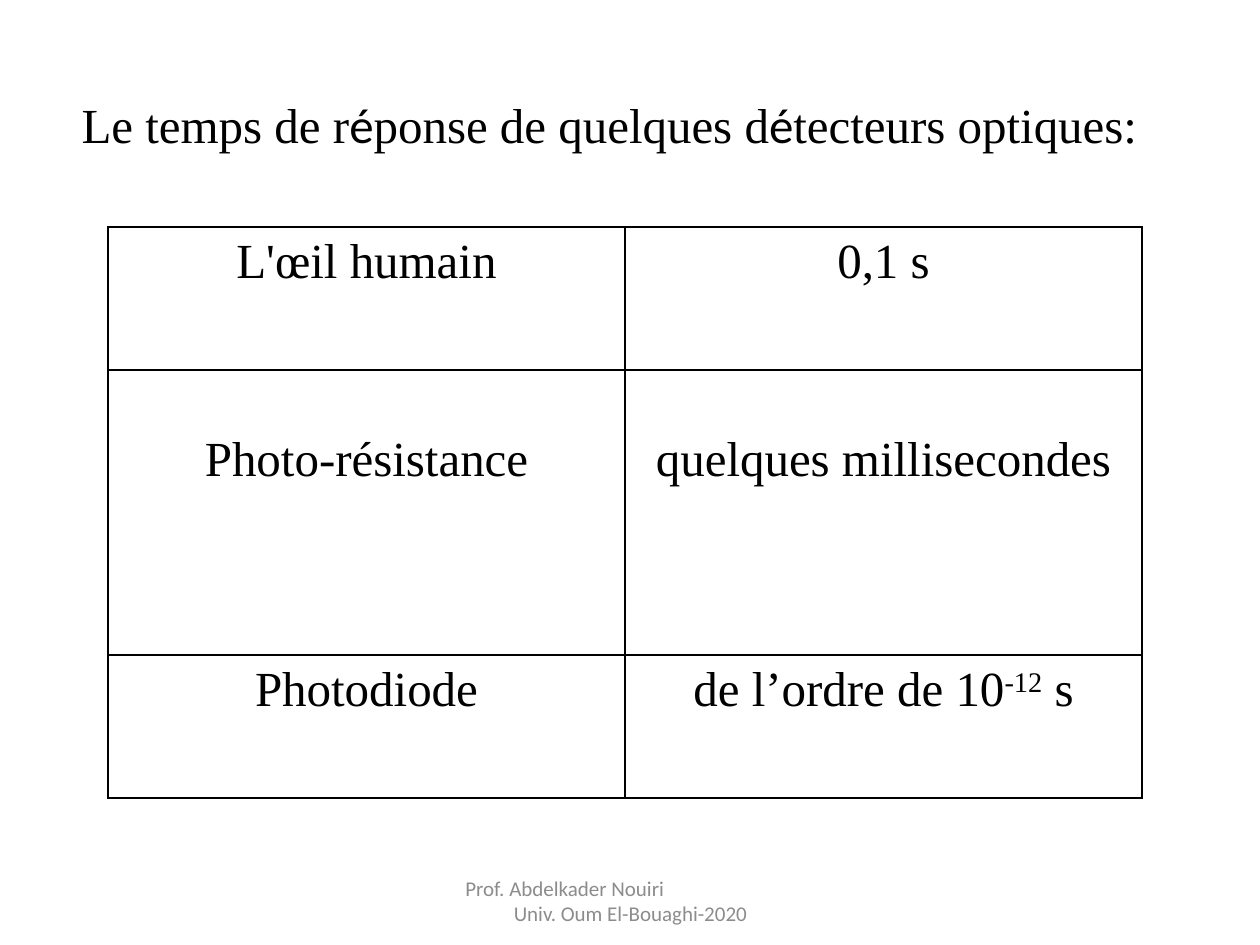
from lxml import etree
from pptx import Presentation
from pptx.dml.color import RGBColor
from pptx.enum.text import MSO_ANCHOR, PP_ALIGN
from pptx.oxml.ns import qn
from pptx.util import Pt

LEFT, CENTER = PP_ALIGN.LEFT, PP_ALIGN.CENTER
TOP, MIDDLE = MSO_ANCHOR.TOP, MSO_ANCHOR.MIDDLE
TITLE_ONLY = 5


def px(length):
    return round(length * 914400 / 126)


def color(value):
    return RGBColor.from_string(value)


class SlideBuilder:
    serif = "Times New Roman"
    sans = "Calibri"
    ink = "000000"
    muted = "8C8C8C"
    text_size = 28
    footer_size = 12

    def __init__(self, presentation):
        self.slide = presentation.slides.add_slide(presentation.slide_layouts[TITLE_ONLY])

    def style(self, paragraph, name, size, ink, alignment):
        paragraph.alignment = alignment
        paragraph.font.name = name
        paragraph.font.size = Pt(size)
        paragraph.font.color.rgb = color(ink)

    def title(self, text, left, top, width, height):
        shape = self.slide.shapes.title
        shape.left, shape.top, shape.width, shape.height = map(px, (left, top, width, height))
        frame = shape.text_frame
        frame.word_wrap = True
        frame.vertical_anchor = TOP
        paragraph = frame.paragraphs[0]
        for index, part in enumerate(text.split("é")):
            if index:
                accent = paragraph.add_run()
                accent.text = "é"
                accent.font.name = self.sans
            paragraph.add_run().text = part
        self.style(paragraph, self.serif, self.text_size, self.ink, LEFT)

    def border(self, cell):
        properties = cell._tc.get_or_add_tcPr()
        for position, side in enumerate(("a:lnL", "a:lnR", "a:lnT", "a:lnB")):
            line = etree.Element(qn(side), w=str(Pt(1)))
            fill = etree.SubElement(line, qn("a:solidFill"))
            etree.SubElement(fill, qn("a:srgbClr"), val=self.ink)
            properties.insert(position, line)

    def cell(self, cell, parts, top_margin):
        cell.fill.background()
        cell.margin_left = cell.margin_right = px(9)
        cell.margin_top, cell.margin_bottom = px(top_margin), 0
        self.border(cell)
        paragraph = cell.text_frame.paragraphs[0]
        paragraph.line_spacing = 1.15
        for index, part in enumerate(parts):
            run = paragraph.add_run()
            run.text = part
            if index == 1:
                run.font._element.set("baseline", "30000")
        self.style(paragraph, self.serif, self.text_size, self.ink, CENTER)

    def table(self, rows, left, top, column_width, heights, top_margins):
        columns = len(rows[0])
        table = self.slide.shapes.add_table(
            len(rows), columns, px(left), px(top), px(column_width * columns), px(sum(heights))
        ).table
        table.first_row = table.horz_banding = False
        for column in table.columns:
            column.width = px(column_width)
        for row, contents, height, margin in zip(table.rows, rows, heights, top_margins):
            row.height = px(height)
            for cell, parts in zip(row.cells, contents):
                self.cell(cell, parts, margin)

    def footer(self, author, university, left, top, width, height, indent):
        frame = self.slide.shapes.add_textbox(*map(px, (left, top, width, height))).text_frame
        frame.word_wrap = True
        frame.vertical_anchor = MIDDLE
        first, second = frame.paragraphs[0], frame.add_paragraph()
        first.text, second.text = author, university
        first._p.get_or_add_pPr().set("marL", str(px(indent)))
        self.style(first, self.sans, self.footer_size, self.muted, LEFT)
        self.style(second, self.sans, self.footer_size, self.muted, CENTER)


def main():
    presentation = Presentation()
    presentation.slide_width, presentation.slide_height = px(1260), px(945)
    builder = SlideBuilder(presentation)
    builder.title("Le temps de réponse de quelques détecteurs optiques:", 69, 88, 1100, 111)
    response_times = [
        (["L'œil humain"], ["0,1 s"]),
        (["Photo-résistance"], ["quelques millisecondes"]),
        (["Photodiode"], ["de l’ordre de 10", "-12", "\N{NO-BREAK SPACE}s"]),
    ]
    builder.table(response_times, 108, 227, 517, (143, 285, 143), (0, 55, 0))
    builder.footer("Prof. Abdelkader Nouiri", "Univ. Oum El-Bouaghi-2020", 431, 876, 399, 50, 22)
    presentation.save("out.pptx")


if __name__ == "__main__":
    main()
